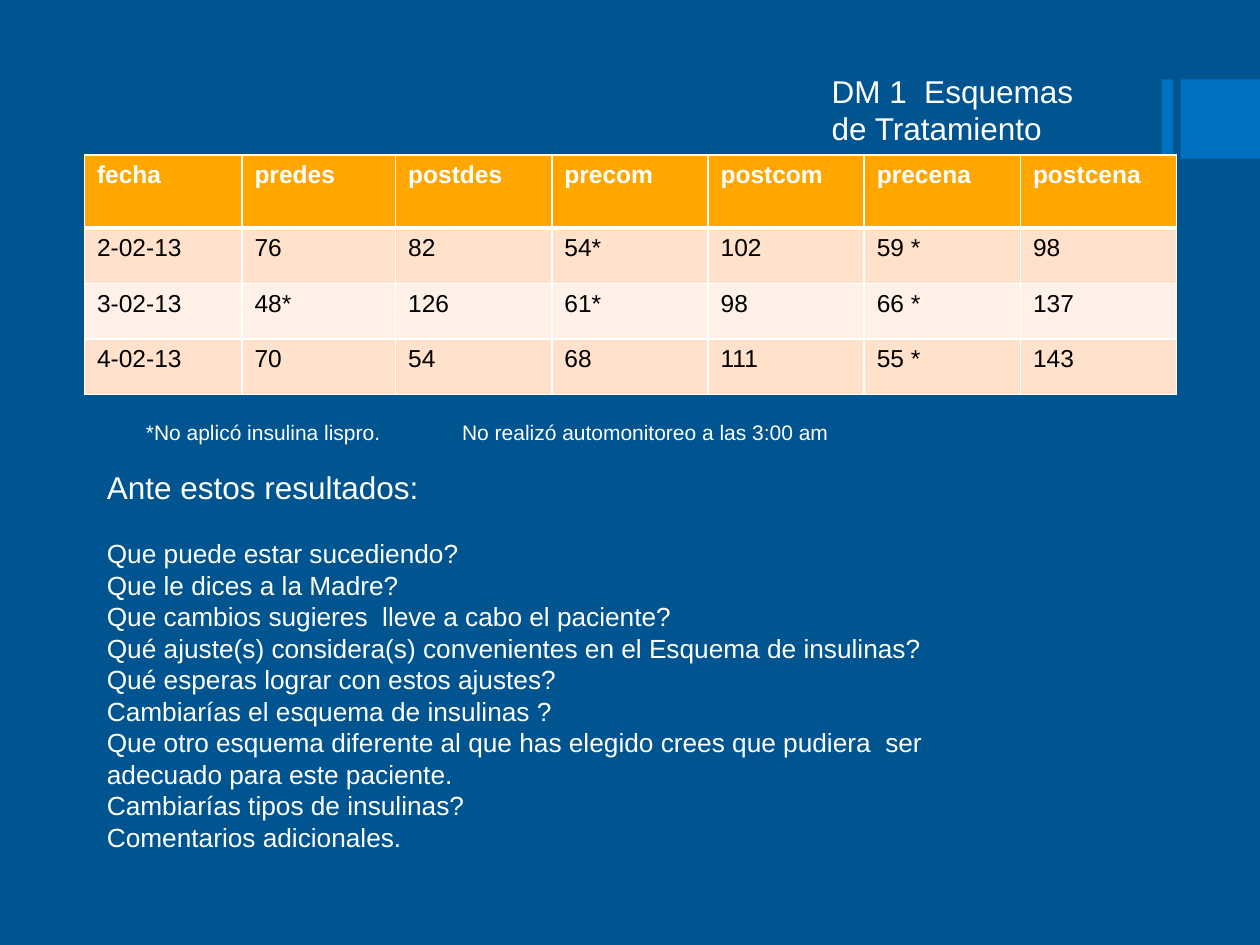
from lxml import etree
from pptx import Presentation
from pptx import util as u
from pptx.dml.color import RGBColor
from pptx.enum import shapes, text
from pptx.oxml.ns import qn

WHITE = "FFFFFF"
ROWS = [
    ["fecha", "predes", "postdes", "precom", "postcom", "precena", "postcena"],
    ["2-02-13", "76", "82", "54*", "102", "59 *", "98"],
    ["3-02-13", "48*", "126", "61*", "98", "66 *", "137"],
    ["4-02-13", "70", "54", "68", "111", "55 *", "143"],
]
HEADING = "Ante estos resultados:"
QUESTIONS = [
    "Que puede estar sucediendo?",
    "Que le dices a la Madre?",
    "Que cambios sugieres  lleve a cabo el paciente?",
    "Qué ajuste(s) considera(s) convenientes en el Esquema de insulinas?",
    "Qué esperas lograr con estos ajustes?",
    "Cambiarías el esquema de insulinas ?",
    "Que otro esquema diferente al que has elegido crees que pudiera  ser",
    "adecuado para este paciente.",
    "Cambiarías tipos de insulinas?",
    "Comentarios adicionales.",
]


def paint(fill, color):
    """Make a fill solid in a hex colour."""
    fill.solid()
    fill.fore_color.rgb = RGBColor.from_string(color)


def format_paragraph(paragraph, size, color=WHITE, bold=False, pitch=None):
    """Format a paragraph and its runs."""
    paragraph.alignment = text.PP_ALIGN.LEFT
    if pitch:
        paragraph.line_spacing = u.Pt(pitch)
    for run in paragraph.runs:
        run.font.name = "Arial"
        run.font.size = u.Pt(size)
        run.font.bold = bold
        run.font.color.rgb = RGBColor.from_string(color)


def add_text(slide, left, top, width, height, content):
    """Add a wrapping text box and return its text frame."""
    box = slide.shapes.add_textbox(*map(u.Inches, (left, top, width, height)))
    box.text_frame.word_wrap = True
    box.text_frame.text = content
    return box.text_frame


def add_accent(slide, left, top, size):
    """Draw the narrow bar and the square at the slide's edge."""
    for offset, width in ((0, 0.09), (0.15, size)):
        shape = slide.shapes.add_shape(
            shapes.MSO_SHAPE.RECTANGLE,
            *map(u.Inches, (left + offset, top, width, size)))
        shape.shadow.inherit = False
        paint(shape.fill, "0070C0")
        shape.line.fill.background()


def place_title(slide, left, top, width, height):
    """Move and format the title placeholder."""
    title = slide.shapes.title
    title.left, title.top, title.width, title.height = map(
        u.Inches, (left, top, width, height))
    frame = title.text_frame
    frame.text = "DM 1  Esquemas de Tratamiento"
    frame.word_wrap = True
    frame.auto_size = text.MSO_AUTO_SIZE.NONE
    frame.vertical_anchor = text.MSO_ANCHOR.TOP
    format_paragraph(frame.paragraphs[0], 18, pitch=21.5)


def set_borders(cell, bottom):
    """Draw white borders, with the bottom one in its own width."""
    properties = cell._tc.get_or_add_tcPr()
    widths = {"a:lnL": 1, "a:lnR": 1, "a:lnT": 1, "a:lnB": bottom}
    for index, (tag, width) in enumerate(widths.items()):
        line = etree.Element(qn(tag), w=str(u.Pt(width)))
        fill = etree.SubElement(line, qn("a:solidFill"))
        etree.SubElement(fill, qn("a:srgbClr"), val=WHITE)
        properties.insert(index, line)


def add_glucose_table(slide, left, top, width, height):
    """Add the table of glucose readings."""
    table = slide.shapes.add_table(
        len(ROWS), len(ROWS[0]),
        *map(u.Inches, (left, top, width, height))).table
    for index, column in enumerate(table.columns):
        column.width = u.Inches({0: 1.25, 1: 1.22}.get(index, 1.24))
    for index, row in enumerate(table.rows):
        header = index == 0
        row.height = u.Inches(0.58 if header else 0.44)
        color = "FFA600" if header else ("FFF1E7", "FFE1CC")[index % 2]
        for cell, value in zip(row.cells, ROWS[index]):
            cell.text = value
            paint(cell.fill, color)
            set_borders(cell, 3 if header or index == 0 else 1)
            format_paragraph(cell.text_frame.paragraphs[0], 14,
                             WHITE if header else "000000", header)


def add_note(slide, left, top, width, height):
    """Add the note under the table, its halves parted by a tab stop."""
    frame = add_text(slide, left, top, width, height,
                     "*No aplicó insulina lispro.\tNo realizó automonitoreo a las 3:00 am")
    paragraph = frame.paragraphs[0]
    format_paragraph(paragraph, 12)
    tabs = etree.SubElement(paragraph._p.get_or_add_pPr(), qn("a:tabLst"))
    etree.SubElement(tabs, qn("a:tab"), pos=str(u.Inches(2.51)), algn="l")


def add_questions(slide, left, top, width, height):
    """Add the heading and the questions."""
    frame = add_text(slide, left, top, width, height,
                     "\n".join([HEADING] + QUESTIONS))
    heading, *questions = frame.paragraphs
    format_paragraph(heading, 18, pitch=21.5)
    heading.space_after = u.Pt(18)
    for paragraph in questions:
        format_paragraph(paragraph, 15, pitch=18)


def main():
    """Build and save the slide."""
    presentation = Presentation()
    presentation.slide_width = u.Inches(10)
    presentation.slide_height = u.Inches(7.5)
    slide = presentation.slides.add_slide(presentation.slide_layouts[5])
    paint(slide.background.fill, "005490")
    add_accent(slide, 9.22, 0.63, 0.63)
    add_glucose_table(slide, 0.67, 1.23, 8.66, 1.91)
    place_title(slide, 6.5, 0.52, 2.46, 0.33)
    add_note(slide, 1.06, 3.28, 7.56, 0.3)
    add_questions(slide, 0.75, 3.67, 8.24, 3.18)
    presentation.save("out.pptx")


if __name__ == "__main__":
    main()
